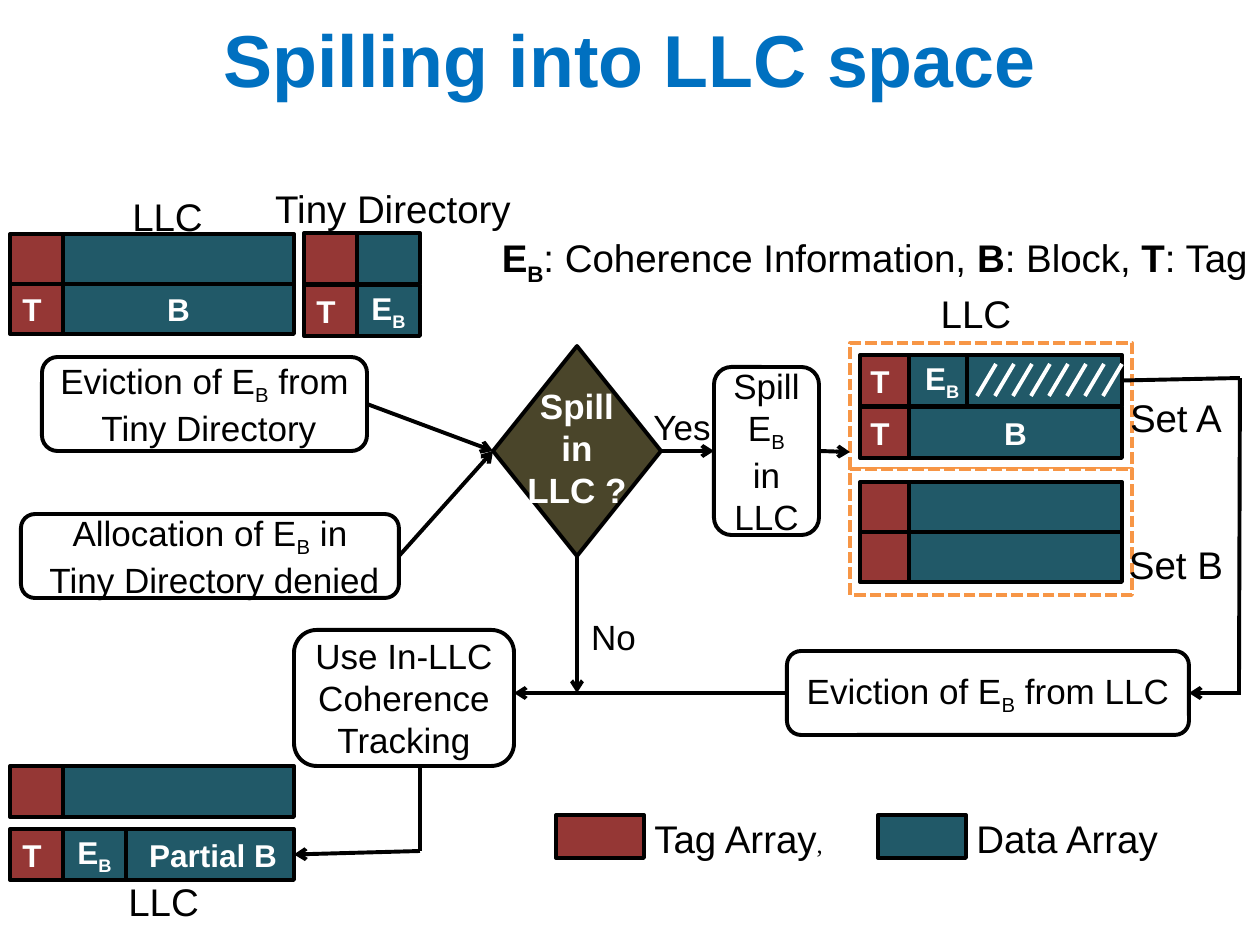
from dataclasses import dataclass
from lxml.etree import SubElement
from pptx import Presentation
from pptx.dml.color import RGBColor as Rgb
from pptx.enum.dml import MSO_LINE as Dash
from pptx.enum.shapes import MSO_CONNECTOR as Link, MSO_SHAPE as Kind
from pptx.enum.text import MSO_ANCHOR as Anchor, MSO_AUTO_SIZE as Fit, PP_ALIGN as Align
from pptx.oxml.ns import qn
from pptx.util import Emu, Pt


@dataclass(frozen=True)
class Theme:
    """Colours, fonts and type sizes of the slide."""
    black: str = "000000"
    white: str = "FFFFFF"
    title: str = "0070C0"
    tag: str = "953735"
    data: str = "215968"
    decision: str = "4A452A"
    group: str = "F79646"
    sans: str = "Arial"
    serif: str = "Times New Roman"
    title_size: int = 42
    label_size: int = 22
    step_size: int = 20
    cell_size: int = 18
    serif_size: int = 14
    stroke: float = 2.25


THEME = Theme()
TOP, LEFT, BOTTOM, RIGHT = range(4)


def px(length):
    """Turn pixels at 126 to the inch into EMU."""
    return Emu(round(length * 914400 / 126))


def style_font(font, size, color, bold=False, name=THEME.sans):
    """Set the size, colour, weight and family of a font."""
    font.size, font.bold, font.name = Pt(size), bold, name
    font.color.rgb = Rgb.from_string(color)


def write(frame, text, size, color, bold=False, align=Align.CENTER):
    """Fill a frame from runs parted by |, marked * bold, _ subscript, ^ serif."""
    for number, line in enumerate(text.split("\n")):
        paragraph = frame.add_paragraph() if number else frame.paragraphs[0]
        paragraph.alignment = align
        for part in line.split("|"):
            words = part.lstrip("*_^")
            marks = part[:len(part) - len(words)]
            run = paragraph.add_run()
            run.text = words
            strong = bold or "*" in marks
            if "^" in marks:
                style_font(run.font, THEME.serif_size, color, strong, THEME.serif)
            else:
                style_font(run.font, size, color, strong)
            if "_" in marks:
                run.font._element.set("baseline", "-25000")


def add_box(slide, area, fill, line=THEME.black, kind=Kind.RECTANGLE):
    """Draw a filled preset shape without shadow."""
    box = slide.shapes.add_shape(kind, *map(px, area))
    box.shadow.inherit = False
    box.fill.solid()
    box.fill.fore_color.rgb = Rgb.from_string(fill)
    if line:
        box.line.color.rgb = Rgb.from_string(line)
        box.line.width = Pt(THEME.stroke)
    else:
        box.line.fill.background()
    return box


def add_step(slide, area, text):
    """Draw a rounded process step of the flow."""
    step = add_box(slide, area, THEME.white, kind=Kind.FLOWCHART_ALTERNATE_PROCESS)
    step.text_frame.word_wrap = True
    step.text_frame.vertical_anchor = Anchor.MIDDLE
    write(step.text_frame, text, THEME.step_size, THEME.black)
    return step


def add_row(slide, left, top, widths, texts=("", ""), height=50):
    """Draw one cache row, a tag cell followed by data cells, and return the last cell."""
    for number, (width, text) in enumerate(zip(widths, texts)):
        fill = THEME.data if number else THEME.tag
        cell = add_box(slide, (left, top, width, height), fill)
        cell.text_frame.word_wrap = False
        cell.text_frame.vertical_anchor = Anchor.MIDDLE
        if text:
            write(cell.text_frame, text, THEME.cell_size, THEME.white, True)
        left += width
    return cell


def add_label(slide, area, text, size=THEME.label_size, color=THEME.black,
              bold=False, align=Align.CENTER):
    """Place a wrapped text label."""
    label = slide.shapes.add_textbox(*map(px, area))
    label.text_frame.word_wrap = True
    write(label.text_frame, text, size, color, bold, align)


def add_line(slide, start, end, color=THEME.black, arrow=True):
    """Draw a line between points or (shape, side) pairs."""
    points = [p if isinstance(p[0], int) else (0, 0) for p in (start, end)]
    line = slide.shapes.add_connector(Link.STRAIGHT, *map(px, points[0] + points[1]))
    if not isinstance(start[0], int):
        line.begin_connect(*start)
    if not isinstance(end[0], int):
        line.end_connect(*end)
    line.line.color.rgb = Rgb.from_string(color)
    line.line.width = Pt(THEME.stroke)
    if arrow:
        SubElement(line.line._get_or_add_ln(), qn("a:tailEnd"), type="arrow")
    SubElement(line._element.spPr, qn("a:effectLst"))


def add_title(slide, text):
    """Fill and place the title placeholder."""
    title = slide.shapes.title
    title.left, title.top, title.width, title.height = map(px, (0, 0, 1260, 116))
    frame = title.text_frame
    frame.text = text
    frame.auto_size = Fit.NONE
    frame.vertical_anchor = Anchor.MIDDLE
    frame.paragraphs[0].alignment = Align.CENTER
    style_font(frame.paragraphs[0].runs[0].font, THEME.title_size, THEME.title, True)


def add_initial_state(slide):
    """Draw the cache and the directory before the spill, with the key to the letters."""
    add_row(slide, 304, 285, (53, 63), ("T ", "E|_B"), 51)
    add_row(slide, 304, 233, (53, 63), height=51)
    add_row(slide, 10, 284, (53, 231), ("T ", "B"))
    add_row(slide, 10, 234, (53, 231))
    add_label(slide, (94, 187, 147, 59), "LLC")
    add_label(slide, (262, 179, 262, 59), "Tiny Directory")
    key = add_box(slide, (483, 231, 777, 59), THEME.white, None)
    key.text_frame.word_wrap = True
    key.text_frame.vertical_anchor = Anchor.MIDDLE
    write(key.text_frame, "*E|*_B|: Coherence Information, |*B|: Block, |*T|: Tag",
          THEME.label_size, THEME.black, align=Align.RIGHT)


def add_spilled_sets(slide):
    """Draw sets A and B after the spill and return the hatched cell."""
    add_label(slide, (908, 284, 136, 59), "LLC")
    for top in (343, 469):
        frame = add_box(slide, (850, top, 282, 126), THEME.white, THEME.group)
        frame.line.dash_style = Dash.SQUARE_DOT
    add_row(slide, 860, 407, (49, 213), ("T ", "B"), 51)
    hatched = add_row(slide, 860, 355, (49, 58, 155), ("T ", " E|_B", ""), 51)
    for number in range(8):
        foot = 977 + 18 * number
        add_line(slide, (foot, 396), (foot + 19, 364), THEME.white, False)
    for top in (482, 532):
        add_row(slide, 860, top, (49, 213))
    for top, name in ((388, "Set A"), (535, "Set B")):
        add_label(slide, (1113, top, 126, 59), name)
    return hatched


def add_tracking_state(slide):
    """Draw the cache under in-LLC tracking and return its partial block."""
    add_row(slide, 10, 766, (53, 231), height=51)
    partial = add_row(slide, 10, 829, (53, 63, 168), ("T ", "E|_B", "^ |Partial B"), 51)
    add_label(slide, (116, 872, 126, 59), "LLC", align=Align.LEFT)
    return partial


def add_legend(slide):
    """Draw the colour key of the arrays."""
    for left, fill, text in ((556, THEME.tag, "Tag Array|^,"), (878, THEME.data, "Data Array")):
        add_box(slide, (left, 815, 88, 43), fill)
        add_label(slide, (left + 86, 809, 276, 106), text, align=Align.LEFT)


def add_flow(slide, hatched, partial):
    """Draw the steps, the decision and the lines that join them."""
    eviction = add_step(slide, (42, 357, 325, 94), "Eviction of E|_B| from\n Tiny Directory")
    denied = add_step(slide, (21, 514, 378, 84), "Allocation of E|_B| in\n Tiny Directory denied")
    decision = add_box(slide, (493, 346, 168, 210), THEME.decision, kind=Kind.DIAMOND)
    add_label(slide, (493, 378, 168, 140), "Spill\n in \nLLC ?",
              THEME.step_size, THEME.white, True)
    tracking = add_step(slide, (294, 630, 220, 136), "Use In-LLC Coherence Tracking")
    spill = add_step(slide, (714, 367, 105, 168), "Spill E|_B\nin LLC")
    llc_eviction = add_step(slide, (787, 651, 402, 84), "Eviction of E|_B| from LLC")
    add_label(slide, (640, 399, 84, 55), "Yes", THEME.step_size)
    add_label(slide, (577, 609, 73, 55), "No", THEME.step_size)

    for step in (eviction, denied):
        add_line(slide, (step, RIGHT), (decision, LEFT))
    add_line(slide, (decision, RIGHT), (spill, LEFT))
    add_line(slide, (decision, BOTTOM), (577, 693))
    add_line(slide, (spill, RIGHT), (850, 452))
    add_line(slide, (llc_eviction, LEFT), (514, 693))
    add_line(slide, (hatched, RIGHT), (1240, 378), arrow=False)
    add_line(slide, (1240, 378), (1239, 693), arrow=False)
    add_line(slide, (1241, 693), (llc_eviction, RIGHT))
    add_line(slide, (420, 766), (420, 851), arrow=False)
    add_line(slide, (420, 851), (partial, RIGHT))


def main():
    """Build the slide and save it."""
    deck = Presentation()
    deck.slide_width, deck.slide_height = px(1260), px(945)
    slide = deck.slides.add_slide(deck.slide_layouts[5])
    add_title(slide, "Spilling into LLC space")
    add_initial_state(slide)
    hatched = add_spilled_sets(slide)
    partial = add_tracking_state(slide)
    add_legend(slide)
    add_flow(slide, hatched, partial)
    deck.save("out.pptx")


if __name__ == "__main__":
    main()
